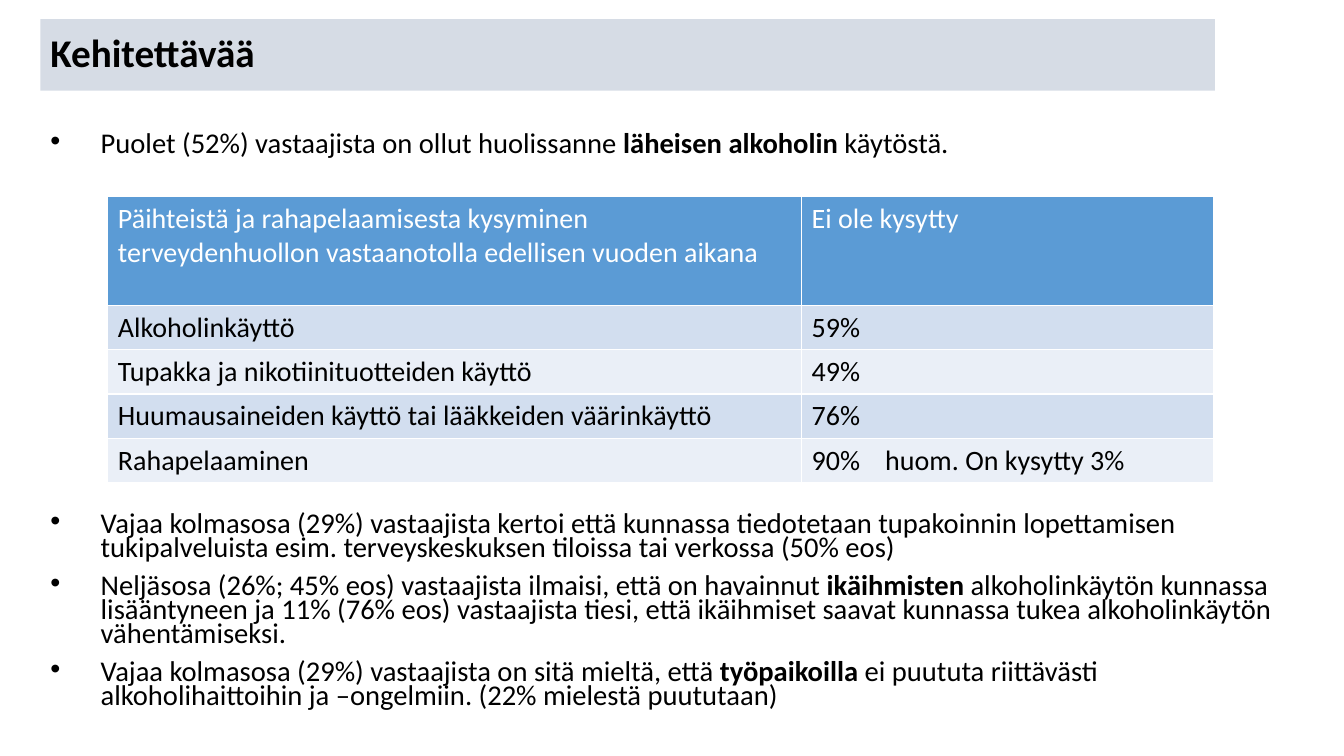
"""Builds the slide on development needs in substance use services."""
from lxml.etree import SubElement
from pptx import Presentation
from pptx.dml.color import RGBColor
from pptx.enum.text import MSO_ANCHOR, MSO_AUTO_SIZE, PP_ALIGN
from pptx.oxml.ns import qn
from pptx.util import Inches, Pt

WIDE, HIGH = 13.33, 7.5
LEFT, RIGHT = 0.4, 12.05
TITLE = "Kehitettävää"
INTRO = [
    [("Puolet (52%) vastaajista on ollut huolissanne ", False),
     ("läheisen alkoholin ", True), ("käytöstä.", False)],
]
NOTES = [
    [("Vajaa kolmasosa (29%) vastaajista kertoi että kunnassa tiedotetaan "
      "tupakoinnin lopettamisen tukipalveluista esim. terveyskeskuksen "
      "tiloissa tai verkossa (50% eos)", False)],
    [("Neljäsosa (26%; 45% eos) vastaajista ilmaisi, että on havainnut ", False),
     ("ikäihmisten", True),
     (" alkoholinkäytön kunnassa lisääntyneen ja 11% (76% eos) vastaajista "
      "tiesi, että ikäihmiset saavat kunnassa tukea alkoholinkäytön "
      "vähentämiseksi.", False)],
    [("Vajaa kolmasosa (29%) vastaajista on sitä mieltä, että ", False),
     ("työpaikoilla", True),
     (" ei puututa riittävästi alkoholihaittoihin ja –ongelmiin. "
      "(22% mielestä puututaan)", False)],
]
LISTS = [(1.28, 0.5, INTRO), (5.05, 2.4, NOTES)]
ROWS = [
    ("Päihteistä ja rahapelaamisesta kysyminen terveydenhuollon "
     "vastaanotolla edellisen vuoden aikana", "Ei ole kysytty"),
    ("Alkoholinkäyttö", "59%"),
    ("Tupakka ja nikotiinituotteiden käyttö", "49%"),
    ("Huumausaineiden käyttö tai lääkkeiden väärinkäyttö", "76%"),
    ("Rahapelaaminen", "90%\thuom. On kysytty 3%"),
]
COLS = (6.88, 4.09)
HEAD, ROW = 1.08, 0.44
BANDS = ("EAEFF7", "D2DEEF")


def paint(fill, tone):
    """Give a fill one solid colour."""
    fill.solid()
    fill.fore_color.rgb = RGBColor.from_string(tone)


def style(run, size, tone="000000", bold=False):
    """Set the font of a run."""
    for key, value in {"name": "Calibri", "size": Pt(size), "bold": bold}.items():
        setattr(run.font, key, value)
    run.font.color.rgb = RGBColor.from_string(tone)


def place(shape, *box):
    """Move and size a shape in inches."""
    for key, value in zip(("left", "top", "width", "height"), box):
        setattr(shape, key, Inches(value))


def add_title(slide):
    """Fill the title bar."""
    title = slide.shapes.title
    place(title, LEFT, 0.19, RIGHT - LEFT, 0.71)
    paint(title.fill, "D6DCE5")
    frame = title.text_frame
    frame.text = TITLE
    frame.auto_size = MSO_AUTO_SIZE.NONE
    frame.vertical_anchor = MSO_ANCHOR.MIDDLE
    para = frame.paragraphs[0]
    para.alignment, para.line_spacing = PP_ALIGN.LEFT, 0.9
    style(para.runs[0], 28, bold=True)


def add_list(slide, top, tall, items):
    """Add a text box of bulleted paragraphs."""
    box = slide.shapes.add_textbox(
        Inches(LEFT), Inches(top), Inches(12.39), Inches(tall))
    frame = box.text_frame
    frame.word_wrap = True
    for i, item in enumerate(items):
        para = frame.add_paragraph() if i else frame.paragraphs[0]
        para.line_spacing, para.space_before = 0.7, Pt(10)
        props = para._p.get_or_add_pPr()
        props.set("marL", str(Inches(0.5)))
        props.set("indent", str(-Inches(0.5)))
        SubElement(props, qn("a:buFont")).set("typeface", "Arial")
        SubElement(props, qn("a:buChar")).set("char", "•")
        for text, bold in item:
            run = para.add_run()
            run.text = text
            style(run, 20.4, bold=bold)


def add_grid(slide):
    """Add the table of topics and shares."""
    grid = slide.shapes.add_table(
        len(ROWS), len(COLS), Inches(1.07), Inches(1.95), Inches(sum(COLS)),
        Inches(HEAD + ROW * (len(ROWS) - 1))).table
    for col, wide in zip(grid.columns, COLS):
        col.width = Inches(wide)
    for r, texts in enumerate(ROWS):
        grid.rows[r].height = Inches(ROW if r else HEAD)
        for c, text in enumerate(texts):
            cell = grid.cell(r, c)
            cell.text = text
            paint(cell.fill, BANDS[r % 2] if r else "5B9BD5")
            para = cell.text_frame.paragraphs[0]
            style(para.runs[0], 20, "000000" if r else "FFFFFF")
            if "\t" in text:
                stops = SubElement(para._p.get_or_add_pPr(), qn("a:tabLst"))
                stop = SubElement(stops, qn("a:tab"))
                stop.set("pos", str(Inches(0.73)))
                stop.set("algn", "l")


def main():
    """Build and save the deck."""
    deck = Presentation()
    deck.slide_width, deck.slide_height = Inches(WIDE), Inches(HIGH)
    slide = deck.slides.add_slide(deck.slide_layouts[5])
    add_title(slide)
    for part in LISTS:
        add_list(slide, *part)
    add_grid(slide)
    deck.save("out.pptx")


if __name__ == "__main__":
    main()
